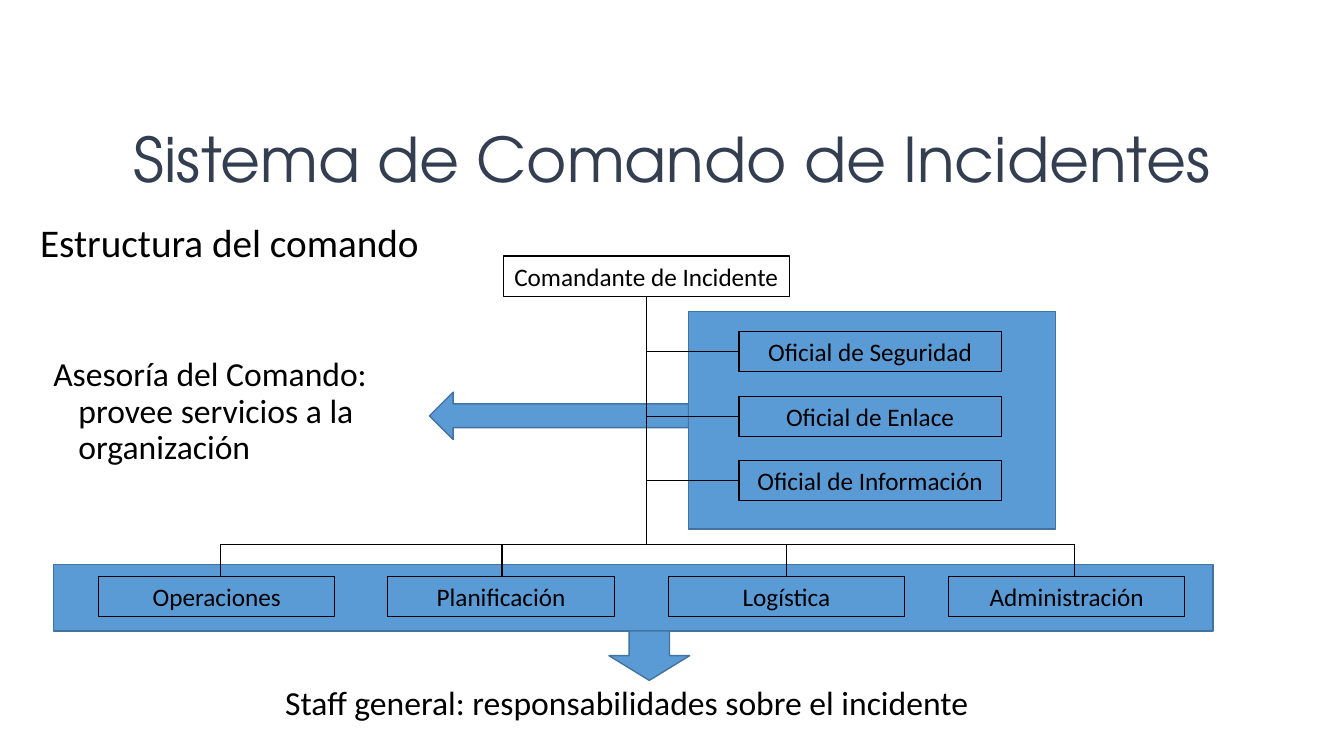
from pptx import Presentation
from pptx.dml.color import RGBColor
from pptx.enum.shapes import MSO_CONNECTOR, MSO_SHAPE
from pptx.enum.text import MSO_ANCHOR, PP_ALIGN
from pptx.oxml import parse_xml
from pptx.oxml.ns import nsdecls
from pptx.util import Inches, Pt

BLUE, EDGE, BLACK, NAVY = "5B9BD5", "43739E", "000000", "333F50"
BODY, HEAD = "Calibri", "TeX Gyre Adventor"
BOX_H = 0.4


def rgb(value):
    """Turn a hex string into a colour."""
    return RGBColor.from_string(value)


def write(tf, text, size, color=BLACK, name=BODY, **layout):
    """Put one formatted paragraph in a text frame."""
    p = tf.paragraphs[0]
    for key, value in layout.items():
        setattr(p, key, value)
    r = p.add_run()
    r.text = text
    for key, value in {"size": Pt(size), "name": name}.items():
        setattr(r.font, key, value)
    r.font.color.rgb = rgb(color)


def add_block(s, kind, left, top, width, height, fill=BLUE, line=EDGE, weight=1):
    """Draw a flat preset shape, unfilled when fill is None."""
    sp = s.shapes.add_shape(kind, Inches(left), Inches(top), Inches(width), Inches(height))
    sp.shadow.inherit = False
    if fill:
        sp.fill.solid()
        sp.fill.fore_color.rgb = rgb(fill)
    else:
        sp.fill.background()
    sp.line.color.rgb = rgb(line)
    sp.line.width = Pt(weight)
    return sp


def add_role(s, text, left, top, width):
    """Draw an outlined box that names a role."""
    sp = add_block(s, MSO_SHAPE.RECTANGLE, left, top, width, BOX_H, None, BLACK, 0.75)
    tf = sp.text_frame
    tf.word_wrap = False
    tf.vertical_anchor = MSO_ANCHOR.MIDDLE
    write(tf, text, 18, alignment=PP_ALIGN.CENTER)


def add_line(s, x1, y1, x2, y2):
    """Draw a thin black connector."""
    c = s.shapes.add_connector(MSO_CONNECTOR.STRAIGHT, *map(Inches, (x1, y1, x2, y2)))
    c.line.color.rgb = rgb(BLACK)
    c.line.width = Pt(1)
    c._element.spPr.append(parse_xml(f"<a:effectLst {nsdecls('a')}/>"))


def add_note(s, text, size, left, top, width, height):
    """Add a text box with a hanging indent."""
    sp = s.shapes.add_textbox(Inches(left), Inches(top), Inches(width), Inches(height))
    tf = sp.text_frame
    tf.word_wrap = True
    pPr = tf.paragraphs[0]._p.get_or_add_pPr()
    pPr.set("marL", str(Inches(0.25)))
    pPr.set("indent", str(-Inches(0.25)))
    write(tf, text, size, line_spacing=0.9)


def add_title(s, text, left, top, width, height):
    """Place and format the title placeholder."""
    sp = s.shapes.title
    box = {"left": left, "top": top, "width": width, "height": height}
    for key, value in box.items():
        setattr(sp, key, Inches(value))
    tf = sp.text_frame
    tf.word_wrap = True
    tf.vertical_anchor = MSO_ANCHOR.MIDDLE
    write(tf, text, 44, NAVY, HEAD, alignment=PP_ALIGN.CENTER, line_spacing=0.9)


def add_command(s, trunk, top, bottom):
    """Draw the commander and the trunk line below."""
    width = 2.84
    add_role(s, "Comandante de Incidente", trunk - width / 2, top, width)
    add_line(s, trunk, top + BOX_H, trunk, bottom)


def add_advisers(s, trunk, left, top, width, height):
    """Draw the advisory panel, its arrow and its officers."""
    arrow_w, arrow_h = 2.57, 0.47
    add_block(s, MSO_SHAPE.LEFT_ARROW, left - arrow_w, top + 0.8, arrow_w, arrow_h)
    add_block(s, MSO_SHAPE.RECTANGLE, left, top, width, height)
    officers = ("Oficial de Seguridad", "Oficial de Enlace", "Oficial de Información")
    for i, text in enumerate(officers):
        y = top + 0.2 + i * 0.64
        add_role(s, text, left + 0.5, y, 2.6)
        add_line(s, trunk, y + BOX_H / 2, left + 0.5, y + BOX_H / 2)


def add_staff(s, left, top, width, height):
    """Draw the general staff band, its branches and its arrow."""
    add_block(s, MSO_SHAPE.RECTANGLE, left, top, width, height)
    sections = (("Operaciones", 2.15, 2.34), ("Planificación", 4.97, 2.26),
                ("Logística", 7.8, 2.34), ("Administración", 10.58, 2.34))
    rail, box_top = top - 0.2, top + 0.12
    drops = (2.19, 4.98, 7.8, 10.66)
    for (text, center, box_w), x in zip(sections, drops):
        add_role(s, text, center - box_w / 2, box_top, box_w)
        add_line(s, x, rail, x, box_top)
    add_line(s, drops[0], rail, drops[-1], rail)
    add_block(s, MSO_SHAPE.DOWN_ARROW, left + 5.51, top + height, 0.8, 0.49)


def main():
    """Build the slide and save it."""
    prs = Presentation()
    prs.slide_width, prs.slide_height = Inches(13.33), Inches(7.5)
    s = prs.slides.add_slide(prs.slide_layouts[5])
    trunk = 6.41
    add_title(s, "Sistema de Comando de Incidentes", 0.92, 0.89, 11.5, 1.45)
    add_note(s, "Estructura del comando", 28, 0.3, 2.17, 4.1, 0.53)
    add_advisers(s, trunk, 6.83, 3.09, 3.64, 2.16)
    add_command(s, trunk, 2.54, 5.4)
    add_note(s, "Asesoría del Comando: provee servicios a la organización",
             24, 0.43, 3.5, 3.81, 1.26)
    add_staff(s, 0.53, 5.6, 11.5, 0.66)
    add_note(s, "Staff general: responsabilidades sobre el incidente",
             24, 2.73, 6.76, 8.5, 0.7)
    prs.save("out.pptx")


if __name__ == "__main__":
    main()
